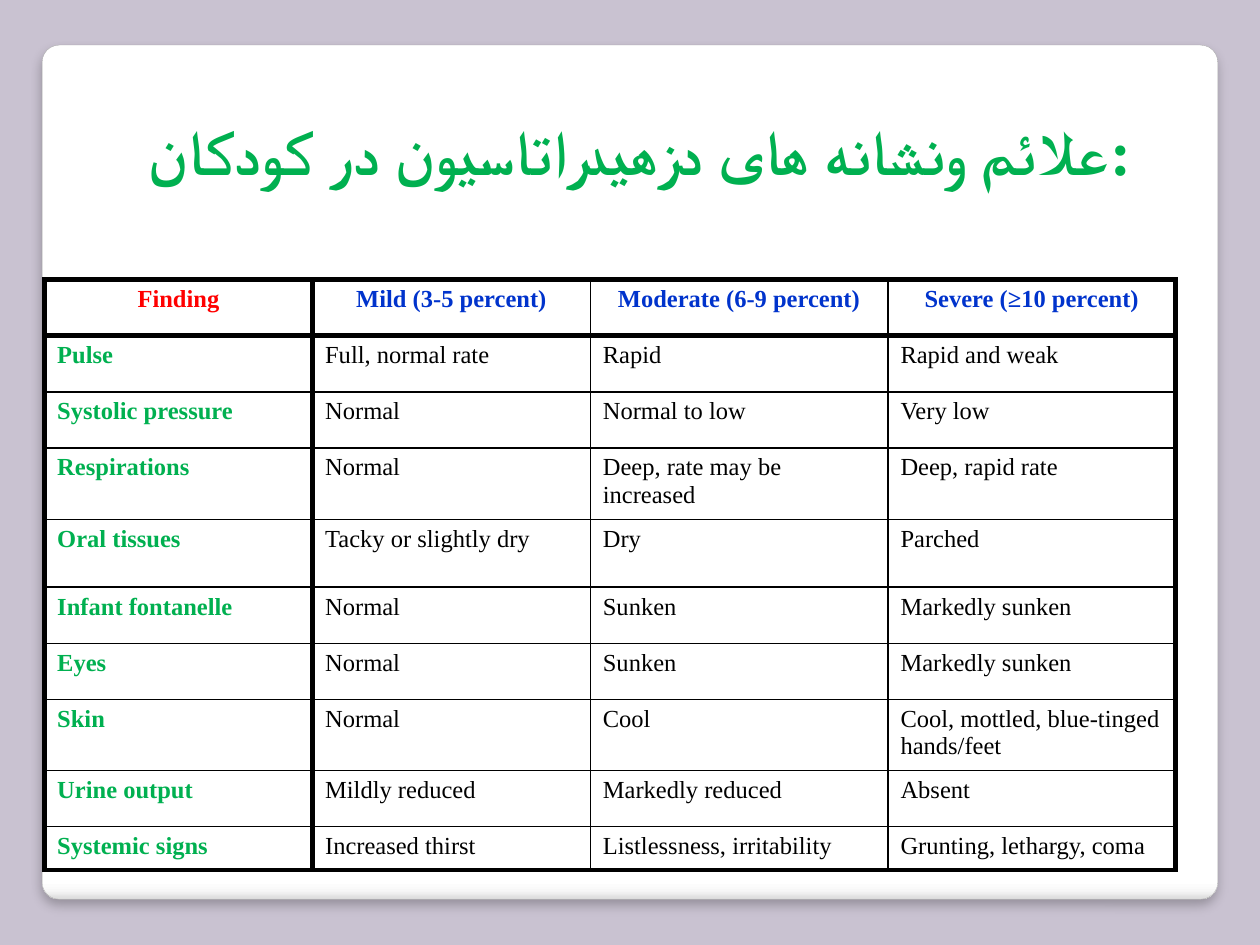
from pptx import Presentation
from pptx.dml.color import RGBColor
from pptx.enum.shapes import MSO_SHAPE
from pptx.enum.text import MSO_ANCHOR, PP_ALIGN
from pptx.oxml import parse_xml
from pptx.oxml.ns import nsdecls
from pptx.util import Cm, Pt

FONT = "Times New Roman"
COLORS = {
    "background": "C9C2D1",
    "card": "FFFFFF",
    "card_low": "F7F7F7",
    "card_edge": "DADADA",
    "card_line": "A4A4A4",
    "green": "00B050",
    "red": "FF0000",
    "blue": "0033CC",
    "black": "000000",
}
TITLE = "علائم ونشانه های دزهیدراتاسیون در کودکان:"
FINDINGS = [
    ("Finding", "Mild (3-5 percent)", "Moderate (6-9 percent)", "Severe (≥10 percent)"),
    ("Pulse", "Full, normal rate", "Rapid", "Rapid and weak"),
    ("Systolic pressure", "Normal", "Normal to low", "Very low"),
    ("Respirations", "Normal", "Deep, rate may be increased", "Deep, rapid rate"),
    ("Oral tissues", "Tacky or slightly dry", "Dry", "Parched"),
    ("Infant fontanelle", "Normal", "Sunken", "Markedly sunken"),
    ("Eyes", "Normal", "Sunken", "Markedly sunken"),
    ("Skin", "Normal", "Cool", "Cool, mottled, blue-tinged hands/feet"),
    ("Urine output", "Mildly reduced", "Markedly reduced", "Absent"),
    ("Systemic signs", "Increased thirst", "Listlessness, irritability",
     "Grunting, lethargy, coma"),
]
COLUMN_WIDTHS = [5.4, 5.6, 6, 5.8]
ROW_HEIGHT = 1.13
SPECIAL_HEIGHTS = {"Respirations": 1.44, "Oral tissues": 1.37, "Skin": 1.44,
                   "Systemic signs": 0.87}
THICK, THIN = Pt(3), Pt(1)


def rgb(name):
    return RGBColor.from_string(COLORS[name])


def write_text(frame, text, size=14, color="black", bold=False,
               align=PP_ALIGN.LEFT, before=0):
    paragraph = frame.paragraphs[0]
    paragraph.alignment = align
    paragraph.space_before = Pt(before)
    run = paragraph.add_run()
    run.text = text
    run.font.name = FONT
    run.font.size = Pt(size)
    run.font.bold = bold
    run.font.color.rgb = rgb(color)
    # Font for the Persian letters
    run.font._element.append(parse_xml(f'<a:cs {nsdecls("a")} typeface="{FONT}"/>'))


def add_card(slide):
    card = slide.shapes.add_shape(MSO_SHAPE.ROUNDED_RECTANGLE,
                                  Cm(0.85), Cm(0.91), Cm(23.7), Cm(17.22))
    card.adjustments[0] = 0.02
    card.line.color.rgb = rgb("card_line")
    card.line.width = Pt(0.16)
    # Gradient that darkens at the bottom edge
    stops = [(0, "card"), (98, "card"), (99, "card_low"), (100, "card_edge")]
    stop_xml = "".join(f'<a:gs pos="{pos * 1000}"><a:srgbClr val="{COLORS[name]}"/></a:gs>'
                       for pos, name in stops)
    outline = card.line._get_or_add_ln()
    outline.addprevious(parse_xml(
        f'<a:gradFill {nsdecls("a")}><a:gsLst>{stop_xml}</a:gsLst>'
        '<a:lin ang="5400000" scaled="0"/></a:gradFill>'))
    # Soft shadow below
    outline.addnext(parse_xml(
        f'<a:effectLst {nsdecls("a")}>'
        f'<a:outerShdw blurRad="{Pt(6)}" dist="{Pt(4)}" dir="5400000" algn="t" rotWithShape="0">'
        f'<a:srgbClr val="{COLORS["black"]}"><a:alpha val="25000"/></a:srgbClr>'
        '</a:outerShdw></a:effectLst>'))


def add_title(slide):
    title = slide.shapes.add_textbox(Cm(2.1), Cm(-0.08), Cm(20.96), Cm(4))
    frame = title.text_frame
    frame.word_wrap = True
    frame.vertical_anchor = MSO_ANCHOR.BOTTOM
    frame.margin_left = Cm(0.5)
    write_text(frame, TITLE, size=36, color="green", bold=True, align=PP_ALIGN.RIGHT)


def set_borders(cell, **widths):
    properties = cell._tc.get_or_add_tcPr()
    for index, (side, width) in enumerate(widths.items()):
        properties.insert(index, parse_xml(
            f'<a:ln{side} {nsdecls("a")} w="{width}"><a:solidFill>'
            f'<a:srgbClr val="{COLORS["black"]}"/></a:solidFill></a:ln{side}>'))


def add_findings_table(slide):
    row_count, column_count = len(FINDINGS), len(COLUMN_WIDTHS)
    heights = [SPECIAL_HEIGHTS.get(row[0], ROW_HEIGHT) for row in FINDINGS]
    table = slide.shapes.add_table(row_count, column_count, Cm(0.9), Cm(5.64),
                                   Cm(sum(COLUMN_WIDTHS)), Cm(sum(heights))).table
    table.first_row = table.horz_banding = False
    for column, width in zip(table.columns, COLUMN_WIDTHS):
        column.width = Cm(width)
    for r, (findings, height) in enumerate(zip(FINDINGS, heights)):
        table.rows[r].height = Cm(height)
        for c, text in enumerate(findings):
            cell = table.cell(r, c)
            header, label = r == 0, c == 0
            if header:
                color = "red" if label else "blue"
            else:
                color = "green" if label else "black"
            write_text(cell.text_frame, text, color=color, bold=header or label,
                       align=PP_ALIGN.CENTER if header else PP_ALIGN.LEFT, before=2.8)
            cell.fill.background()
            # Thick frame, header rule and label rule; thin lines elsewhere
            set_borders(cell,
                        L=THICK if c <= 1 else THIN,
                        R=THICK if c in (0, column_count - 1) else THIN,
                        T=THICK if r <= 1 else THIN,
                        B=THICK if r in (0, row_count - 1) else THIN)


def main():
    deck = Presentation()
    deck.slide_width, deck.slide_height = Cm(25.4), Cm(19.05)
    slide = deck.slides.add_slide(deck.slide_layouts[6])
    slide.background.fill.solid()
    slide.background.fill.fore_color.rgb = rgb("background")
    add_card(slide)
    add_title(slide)
    add_findings_table(slide)
    deck.save("out.pptx")


if __name__ == "__main__":
    main()
